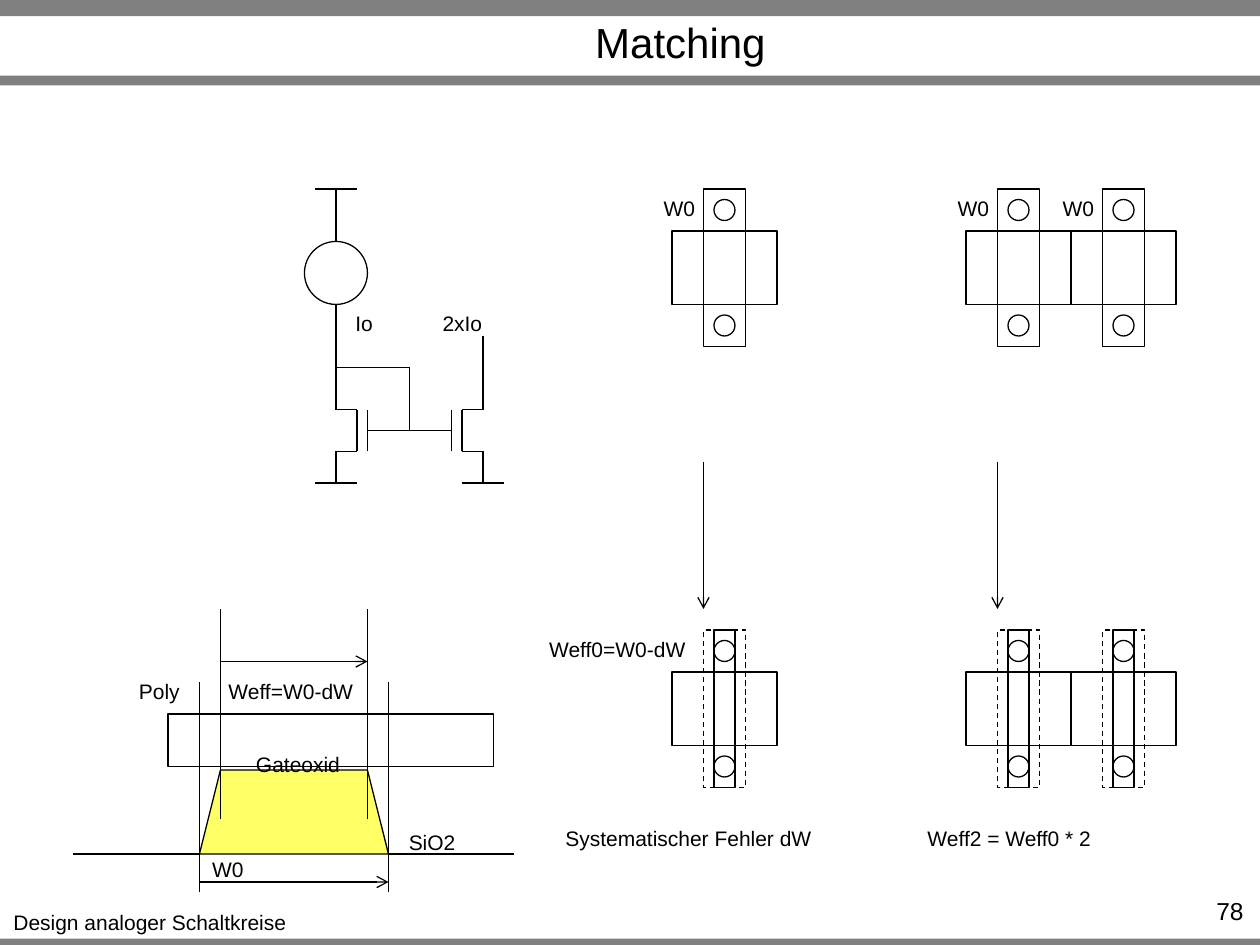
from lxml import etree
from pptx import Presentation
from pptx.dml.color import RGBColor
from pptx.enum.dml import MSO_LINE
from pptx.enum.shapes import MSO_CONNECTOR, MSO_SHAPE
from pptx.enum.text import MSO_ANCHOR, MSO_AUTO_SIZE, PP_ALIGN
from pptx.oxml.ns import qn
from pptx.util import Pt

COLORS = {"black": "000000", "bar": "808080", "oxide": "FFFF66"}
FONT = "Arial"
RECTANGLE, ELLIPSE, TRAPEZOID = MSO_SHAPE.RECTANGLE, MSO_SHAPE.OVAL, MSO_SHAPE.TRAPEZOID
STRAIGHT = MSO_CONNECTOR.STRAIGHT
DASH = MSO_LINE.DASH
CENTER, RIGHT = PP_ALIGN.CENTER, PP_ALIGN.RIGHT


def color(name):
    return RGBColor.from_string(COLORS[name])


def add_line(shapes, x1, y1, x2, y2, arrow=False):
    connector = shapes.add_connector(STRAIGHT, Pt(x1), Pt(y1), Pt(x2), Pt(y2))
    connector.line.width = Pt(0.75)
    connector.line.color.rgb = color("black")
    if arrow:
        etree.SubElement(connector.line._get_or_add_ln(), qn("a:tailEnd"), type="arrow")
    etree.SubElement(connector._element.spPr, qn("a:effectLst"))


def add_figure(shapes, kind, left, top, width, height, fill=None, outline="black", dash=None):
    shape = shapes.add_shape(kind, Pt(left), Pt(top), Pt(width), Pt(height))
    shape.shadow.inherit = False
    if fill:
        shape.fill.solid()
        shape.fill.fore_color.rgb = color(fill)
    else:
        shape.fill.background()
    if outline:
        shape.line.color.rgb = color(outline)
        shape.line.width = Pt(0.75)
        if dash:
            shape.line.dash_style = dash
    else:
        shape.line.fill.background()


def write_text(frame, text, size, alignment):
    paragraph = frame.paragraphs[0]
    paragraph.alignment = alignment
    run = paragraph.add_run()
    run.text = text
    run.font.name = FONT
    run.font.size = Pt(size)
    run.font.color.rgb = color("black")


def add_label(shapes, text, left, top, width, size=12, alignment=CENTER):
    box = shapes.add_textbox(Pt(left), Pt(top), Pt(width), Pt(21.6))
    box.text_frame.word_wrap = False
    box.text_frame.auto_size = MSO_AUTO_SIZE.SHAPE_TO_FIT_TEXT
    write_text(box.text_frame, text, size, alignment)


def add_frame(slide, width, height):
    for top, thickness in ((height - 3.6, 3.6), (0, 9.2), (43.2, 5.6)):
        add_figure(slide.shapes, RECTANGLE, 0, top, width, thickness, "bar", None)
    add_label(slide.shapes, "Design analoger Schaltkreise", 0, 516.2, 171.4)
    add_label(slide.shapes, "78", 655.2, 508.3, 62.6, 14, RIGHT)
    title = slide.shapes.title
    title.left, title.top, title.width, title.height = Pt(93.6), Pt(10), Pt(590.4), Pt(27.4)
    title.text_frame.vertical_anchor = MSO_ANCHOR.MIDDLE
    title.text_frame.auto_size = MSO_AUTO_SIZE.NONE
    write_text(title.text_frame, "Matching", 24, CENTER)


def add_transistor(slide, drain, top, direction):
    group = slide.shapes.add_group_shape()
    strokes = (
        (0, 42, 12, 42), (12, 42, 12, 18), (30, 30, 18, 30),
        (18, 42, 18, 18), (0, 18, 12, 18), (0, 18, 0, 0),
        (0, 60, 0, 42), (30, 30, 42, 30), (12, 60, -12, 60),
    )
    for x1, y1, x2, y2 in strokes:
        add_line(group.shapes, drain + direction * x1, top + y1, drain + direction * x2, top + y2)


def add_current_mirror(slide, left, top):
    shapes = slide.shapes
    input_x, gate_x, output_x = left + 18, left + 60, left + 102
    add_transistor(slide, input_x, top + 108, 1)
    add_transistor(slide, output_x, top + 108, -1)
    add_figure(shapes, ELLIPSE, left, top + 30, 36, 36)
    add_line(shapes, input_x - 12, top, input_x + 12, top)
    add_line(shapes, input_x, top, input_x, top + 30)
    add_line(shapes, input_x, top + 66, input_x, top + 108)
    add_line(shapes, gate_x, top + 102, input_x, top + 102)
    add_line(shapes, gate_x, top + 102, gate_x, top + 138)
    add_line(shapes, output_x, top + 84, output_x, top + 108)
    add_label(shapes, "Io", left + 21.8, top + 66, 24.5)
    add_label(shapes, "2xIo", left + 71.5, top + 66, 37.4)


def add_gate_layout(slide, left, top, shrunk=False):
    shapes = slide.shapes
    add_figure(shapes, RECTANGLE, left + 18, top, 24, 90, dash=DASH if shrunk else None)
    add_figure(shapes, RECTANGLE, left, top + 24, 60, 42)
    for contact_top in (top + 6, top + 72):
        add_figure(shapes, ELLIPSE, left + 24, contact_top, 12, 12)
    if shrunk:
        add_figure(shapes, RECTANGLE, left + 24, top, 12, 90)
    else:
        add_label(shapes, "W0", left - 12, top, 32.4)


def add_layout_column(slide, left, top, count):
    for index in range(count):
        add_gate_layout(slide, left + 60 * index, top)
        add_gate_layout(slide, left + 60 * index, top + 252, shrunk=True)
    add_line(slide.shapes, left + 18, top + 156, left + 18, top + 240, arrow=True)


def add_cross_section(slide, left, top):
    shapes = slide.shapes
    bottom_left, bottom_right = left + 72, left + 180
    top_left, top_right = bottom_left + 12, bottom_right - 12
    oxide, surface = top + 92, top + 140
    add_figure(shapes, RECTANGLE, left + 54, top + 60, 186, 30)
    add_line(shapes, left, surface, bottom_left, surface)
    add_line(shapes, bottom_right, surface, left + 252, surface)
    add_figure(shapes, TRAPEZOID, bottom_left, oxide, 108, surface - oxide, "oxide")
    for x in (bottom_left, bottom_right):
        add_line(shapes, x, top + 162, x, top + 42)
    for x in (top_left, top_right):
        add_line(shapes, x, top + 120, x, top)
    add_line(shapes, top_left, top + 30, top_right, top + 30, arrow=True)
    add_line(shapes, bottom_left, top + 156, bottom_right, top + 156, arrow=True)
    labels = (
        ("Poly", 30, 36, 38.2), ("Weff=W0-dW", 81, 36, 86.4),
        ("Gateoxid", 97, 78, 62.6), ("SiO2", 184, 122.2, 41.8), ("W0", 72, 138, 32.4),
    )
    for text, x, y, width in labels:
        add_label(shapes, text, left + x, top + y, width)


def main():
    presentation = Presentation()
    presentation.slide_width, presentation.slide_height = Pt(720), Pt(540)
    slide = presentation.slides.add_slide(presentation.slide_layouts[5])
    add_frame(slide, 720, 540)
    add_current_mirror(slide, 174, 108)
    add_layout_column(slide, 384, 108, 1)
    add_layout_column(slide, 552, 108, 2)
    add_cross_section(slide, 42, 348)
    add_label(slide.shapes, "Weff0=W0-dW", 306, 360, 93.6)
    add_label(slide.shapes, "Systematischer Fehler dW", 315.4, 468, 156.2)
    add_label(slide.shapes, "Weff2 = Weff0 * 2", 520.6, 468, 112.3)
    presentation.save("out.pptx")


if __name__ == "__main__":
    main()
